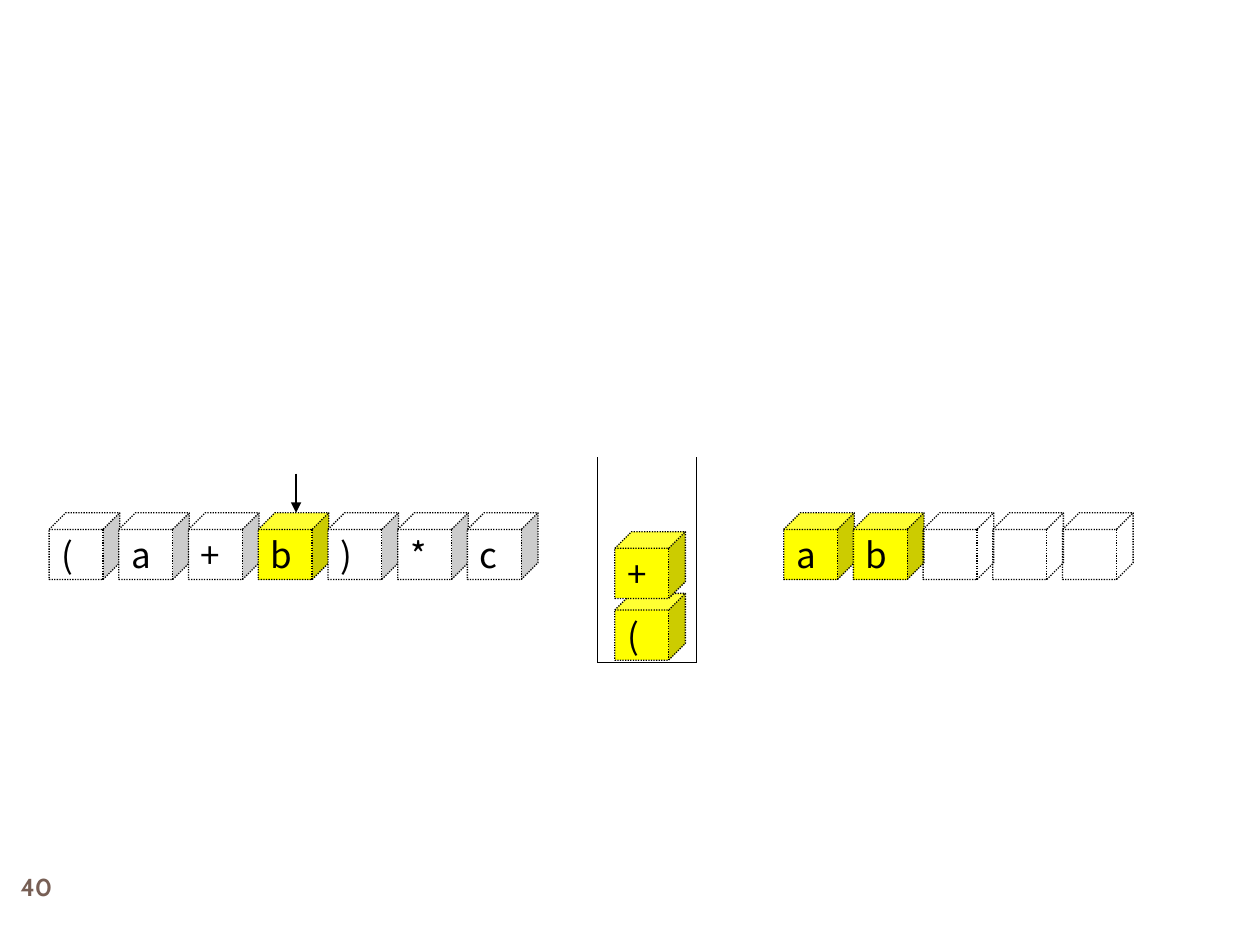
from dataclasses import dataclass
from lxml import etree
from pptx import Presentation
from pptx.dml.color import RGBColor
from pptx.enum.dml import MSO_LINE
from pptx.enum.shapes import MSO_CONNECTOR, MSO_SHAPE
from pptx.enum.text import MSO_ANCHOR, PP_ALIGN
from pptx.oxml.ns import qn
from pptx.util import Inches, Pt

CUBE, STRAIGHT = MSO_SHAPE.CUBE, MSO_CONNECTOR.STRAIGHT
DOTTED = MSO_LINE.ROUND_DOT
MIDDLE = MSO_ANCHOR.MIDDLE
LEFT, CENTER = PP_ALIGN.LEFT, PP_ALIGN.CENTER

BLACK, WHITE, YELLOW, BROWN = "000000", "FFFFFF", "FFFF00", "775F55"
CUBE_W, CUBE_H = 0.56, 0.53
PITCH = 3.32 / 6  # seven input cubes span six steps
ROW_TOP = 4.07
TOKEN_FONT = {"name": "Noto Sans CJK KR", "size": Pt(20)}
NUMBER_FONT = {"name": "Cabin", "size": Pt(14), "bold": True}


@dataclass
class Cube:
    x: float
    y: float
    text: str = ""
    fill: str | None = None


def color(hex_code: str) -> RGBColor:
    return RGBColor.from_string(hex_code)


def write(sp, text: str, fmt: dict, hex_code: str, align) -> None:
    tf = sp.text_frame
    tf.word_wrap = True
    tf.vertical_anchor = MIDDLE
    p = tf.paragraphs[0]
    p.alignment = align
    r = p.add_run()
    r.text = text
    r.font.color.rgb = color(hex_code)
    for name, value in fmt.items():
        setattr(r.font, name, value)


def add_cube(s, cube: Cube) -> None:
    sp = s.shapes.add_shape(CUBE, Inches(cube.x), Inches(cube.y),
                            Inches(CUBE_W), Inches(CUBE_H))
    sp.adjustments[0] = 0.25
    sp.shadow.inherit = False
    if cube.fill:
        sp.fill.solid()
        sp.fill.fore_color.rgb = color(cube.fill)
    else:
        sp.fill.background()
    sp.line.color.rgb = color(BLACK)
    sp.line.width = Pt(0.75)
    sp.line.dash_style = DOTTED
    if cube.text:
        write(sp, cube.text, TOKEN_FONT, BLACK, LEFT)


def add_line(s, start: tuple, end: tuple, arrow: bool = False) -> None:
    cx = s.shapes.add_connector(STRAIGHT, *map(Inches, start + end))
    cx.line.color.rgb = color(BLACK)
    cx.line.width = Pt(0.75)
    if arrow:
        etree.SubElement(cx.line._get_or_add_ln(), qn("a:tailEnd"), type="triangle")
    etree.SubElement(cx._element.spPr, qn("a:effectLst"))


def main() -> None:
    prs = Presentation()
    prs.slide_width, prs.slide_height = Inches(10), Inches(7.5)
    s = prs.slides.add_slide(prs.slide_layouts[6])

    # Input expression, with the current token highlighted
    for i, token in enumerate("(a+b)*c"):
        add_cube(s, Cube(0.39 + i * PITCH, ROW_TOP, token,
                         YELLOW if token == "b" else WHITE))
    add_line(s, (2.35, 3.76), (2.35, ROW_TOP), arrow=True)

    # Output: two tokens written, three places free
    for i, token in enumerate(["a", "b", "", "", ""]):
        add_cube(s, Cube(6.22 + i * PITCH, ROW_TOP, token,
                         YELLOW if token else None))

    # Stack: open container, filled from the bottom
    corners = [(4.74, 3.63), (4.74, 5.26), (5.53, 5.26), (5.53, 3.63)]
    for start, end in zip(corners, corners[1:]):
        add_line(s, start, end)
    for i, token in enumerate("(+"):
        add_cube(s, Cube(4.88, 4.71 - i * 0.49, token, YELLOW))

    # Slide number
    box = s.shapes.add_textbox(Inches(0), Inches(6.83), Inches(0.58), Inches(0.42))
    write(box, "40", NUMBER_FONT, BROWN, CENTER)

    prs.save("out.pptx")


if __name__ == "__main__":
    main()
